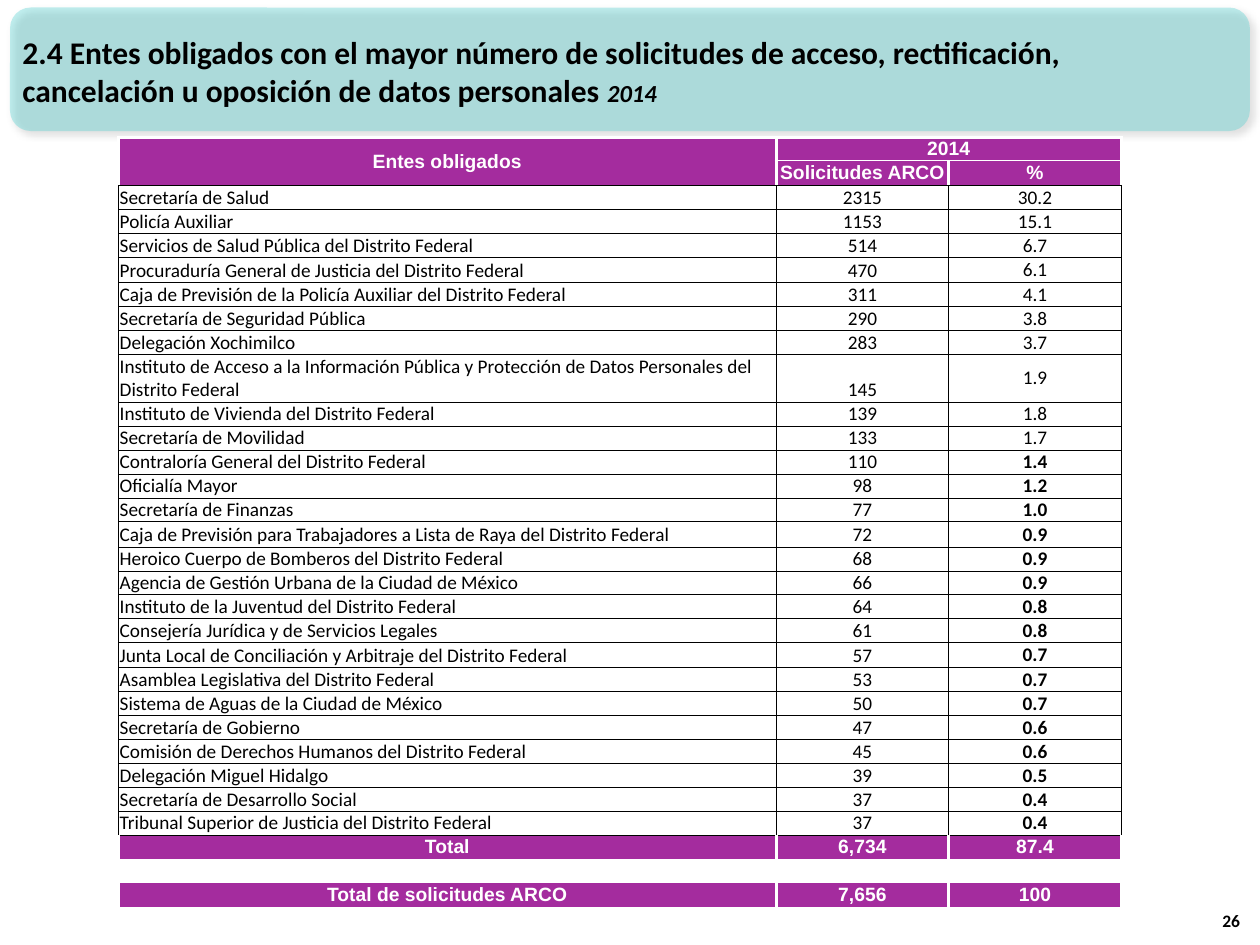
from lxml import etree
from pptx import Presentation, util as u
from pptx.dml.color import RGBColor
from pptx.enum import shapes, text
from pptx.oxml import parse_xml
from pptx.oxml.ns import qn

NS = 'xmlns:a="http://schemas.openxmlformats.org/drawingml/2006/main"'
PURPLE, WHITE, BLACK = "A42C9E", "FFFFFF", "000000"
LEFT, CENTER, RIGHT = text.PP_ALIGN.LEFT, text.PP_ALIGN.CENTER, text.PP_ALIGN.RIGHT
MIDDLE, BOTTOM = text.MSO_ANCHOR.MIDDLE, text.MSO_ANCHOR.BOTTOM


def add_text(p, words, size=11, font="Calibri", color=BLACK, bold=False, italic=False, align=LEFT):
    p.alignment = align
    r = p.add_run()
    r.text = words
    r.font.size, r.font.name = u.Pt(size), font
    r.font.bold, r.font.italic = bold, italic
    r.font.color.rgb = RGBColor.from_string(color)


def set_borders(cell, **sides):
    """Each side is (colour, points), or None for no line."""
    tcPr = cell._tc.get_or_add_tcPr()
    for i, side in enumerate("LRTB"):
        line = sides.get(side)
        color, width = line or (BLACK, 0)
        fill = f'<a:solidFill><a:srgbClr val="{color}"/></a:solidFill>' if line else "<a:noFill/>"
        tcPr.insert(i, parse_xml(f'<a:ln{side} {NS} w="{int(u.Pt(width))}">{fill}</a:ln{side}>'))


prs = Presentation()
prs.slide_width, prs.slide_height = u.Inches(10), u.Inches(7.5)
s = prs.slides.add_slide(prs.slide_layouts[6])

# Title banner: translucent fill and soft shadow
sp = s.shapes.add_shape(shapes.MSO_SHAPE.ROUNDED_RECTANGLE,
                        u.Inches(0.08), u.Inches(0.06), u.Inches(9.84), u.Inches(0.98))
sp.shadow.inherit = False
sp.line.fill.background()
sp.fill.solid()
sp.fill.fore_color.rgb = RGBColor.from_string("33CCCC")
etree.SubElement(sp._element.spPr.find(".//" + qn("a:srgbClr")), qn("a:alpha"), val="30000")
sp._element.spPr.find(qn("a:effectLst")).append(parse_xml(
    f'<a:outerShdw {NS} blurRad="{int(u.Pt(4))}" dist="{int(u.Pt(3))}" dir="2700000" algn="tl" '
    'rotWithShape="0"><a:srgbClr val="000000"><a:alpha val="40000"/></a:srgbClr></a:outerShdw>'))

# Title and page number
boxes = [
    ((0.08, 0.09, 9.17, 0.94), MIDDLE, LEFT,
     [("2.4 Entes obligados con el mayor número de solicitudes de acceso, rectificación, "
       "cancelación u oposición de datos personales ", 18, False), ("2014", 14, True)]),
    ((9.54, 7.04, 0.4, 0.4), BOTTOM, RIGHT, [("26", 10, False)]),
]
for place, anchor, align, runs in boxes:
    tf = s.shapes.add_textbox(*[u.Inches(v) for v in place]).text_frame
    tf.word_wrap, tf.vertical_anchor = True, anchor
    for words, size, italic in runs:
        add_text(tf.paragraphs[0], words, size=size, bold=True, italic=italic, align=align)

# Table contents
header = [("Entes obligados", "2014", ""), ("", "Solicitudes ARCO", "%")]
entities = [
    ("Secretaría de Salud", "2315", "30.2"),
    ("Policía Auxiliar", "1153", "15.1"),
    ("Servicios de Salud Pública del Distrito Federal", "514", "6.7"),
    ("Procuraduría General de Justicia del Distrito Federal", "470", "6.1"),
    ("Caja de Previsión de la Policía Auxiliar del Distrito Federal", "311", "4.1"),
    ("Secretaría de Seguridad Pública", "290", "3.8"),
    ("Delegación Xochimilco", "283", "3.7"),
    ("Instituto de Acceso a la Información Pública y Protección de Datos Personales del "
     "Distrito Federal", "145", "1.9"),
    ("Instituto de Vivienda del Distrito Federal", "139", "1.8"),
    ("Secretaría de Movilidad", "133", "1.7"),
    ("Contraloría General del Distrito Federal", "110", "1.4"),
    ("Oficialía Mayor", "98", "1.2"),
    ("Secretaría de Finanzas", "77", "1.0"),
    ("Caja de Previsión para Trabajadores a Lista de Raya del Distrito Federal", "72", "0.9"),
    ("Heroico Cuerpo de Bomberos del Distrito Federal", "68", "0.9"),
    ("Agencia de Gestión Urbana de la Ciudad de México", "66", "0.9"),
    ("Instituto de la Juventud del Distrito Federal", "64", "0.8"),
    ("Consejería Jurídica y de Servicios Legales", "61", "0.8"),
    ("Junta Local de Conciliación y Arbitraje del Distrito Federal", "57", "0.7"),
    ("Asamblea Legislativa del Distrito Federal", "53", "0.7"),
    ("Sistema de Aguas de la Ciudad de México", "50", "0.7"),
    ("Secretaría de Gobierno", "47", "0.6"),
    ("Comisión de Derechos Humanos del Distrito Federal", "45", "0.6"),
    ("Delegación Miguel Hidalgo", "39", "0.5"),
    ("Secretaría de Desarrollo Social", "37", "0.4"),
    ("Tribunal Superior de Justicia del Distrito Federal", "37", "0.4"),
]
totals = [("Total", "6,734", "87.4"), ("", "", ""), ("Total de solicitudes ARCO", "7,656", "100")]
rows = header + entities + totals
first_total = len(header) + len(entities)
spacer = first_total + 1
first_bold = len(header) + 10  # percentages turn bold from here on

# Table grid
tb = s.shapes.add_table(len(rows), 3, u.Inches(0.94), u.Inches(1.09),
                        u.Inches(7.96), u.Inches(6.11)).table
tb.first_row = tb.horz_banding = False
for col, width in zip(tb.columns, (5.22, 1.37, 1.37)):
    col.width = u.Inches(width)
heights = {0: 0.18, 1: 0.2, 5: 0.2, 9: 0.38, 15: 0.2, 20: 0.2}
for i, row in enumerate(tb.rows):
    row.height = u.Inches(heights.get(i, 0.19))
tb.cell(0, 0).merge(tb.cell(1, 0))
tb.cell(0, 1).merge(tb.cell(0, 2))

# Table cells
thin, thin_white, thick_white = (BLACK, 0.5), (WHITE, 0.5), (WHITE, 2)
for i, row in enumerate(rows):
    is_entity = len(header) <= i < first_total
    for j, words in enumerate(row):
        cell = tb.cell(i, j)
        cell.margin_left = cell.margin_right = u.Inches(0.01)
        cell.margin_top = cell.margin_bottom = 0
        cell.vertical_anchor = BOTTOM if is_entity and j < 2 else MIDDLE
        p = cell.text_frame.paragraphs[0]
        p.font.size = u.Pt(11)
        if is_entity:
            cell.fill.background()
            set_borders(cell, L=thin, R=thin, T=thin, B=thin)
            add_text(p, words, bold=j == 2 and i >= first_bold, align=CENTER if j else LEFT)
        elif i == spacer:
            cell.fill.background()
            set_borders(cell)
        else:
            cell.fill.solid()
            cell.fill.fore_color.rgb = RGBColor.from_string(PURPLE)
            top = {0: thick_white, 1: thin_white, first_total: thin}.get(i)
            bottom = {0: thin_white if j else thin, 1: thin}.get(i)
            set_borders(cell, L=thick_white, R=thick_white, T=top, B=bottom)
            if words:
                add_text(p, words, font="Arial", color=WHITE, bold=True, align=CENTER)

prs.save("out.pptx")
